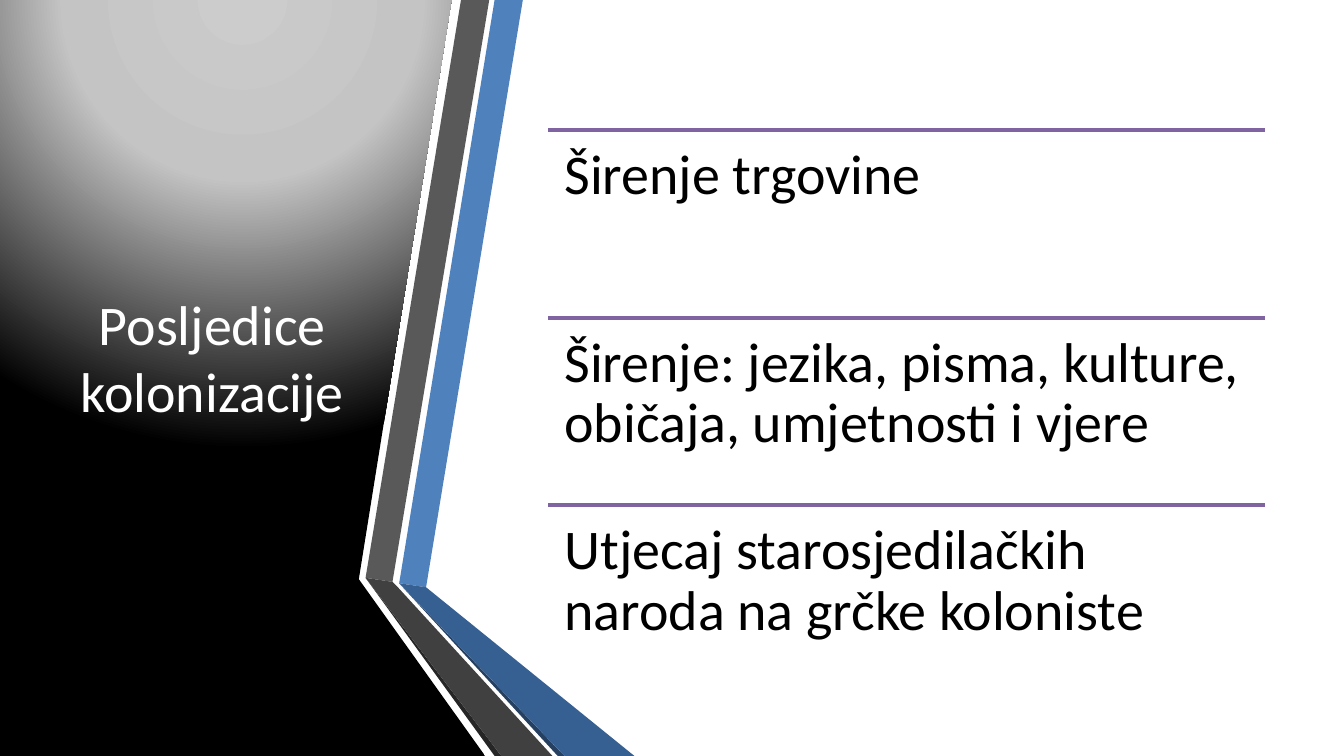
"""Build the slide on the effects of colonization."""
from lxml.etree import SubElement
from pptx import Presentation
from pptx.dml.color import RGBColor
from pptx.enum.shapes import MSO_CONNECTOR
from pptx.enum.text import MSO_ANCHOR, PP_ALIGN
from pptx.oxml import parse_xml
from pptx.oxml.ns import qn
from pptx.util import Inches, Pt

WIDE = 10
HIGH = WIDE * 9 / 16
FONT, SIZE = "Calibri", 30
TITLE = "Posljedice kolonizacije"
ITEMS = [
    "Širenje trgovine",
    "Širenje: jezika, pisma, kulture, običaja, umjetnosti i vjere",
    "Utjecaj starosjedilačkih naroda na grčke koloniste",
]
LEFT, TOP, WIDTH, LAST = 4.08, 0.97, 5.33, 3.76
STEP = (LAST - TOP) / (len(ITEMS) - 1)
PANEL = [(0, 0), (2.64, 0), (3.36, 0), (2.67, 4.31), (3.61, HIGH), (0, HIGH)]
STOPS = [(0, "CCCCCC"), (40, "C4C4C4"), (100, "000000")]
BANDS = [
    ("4F81BD", [(2.97, 4.34), (3.17, 4.37), (3.89, 0), (3.68, 0)]),
    ("595959", [(3.64, 0), (3.43, 0), (2.72, 4.3), (2.92, 4.33)]),
    ("262626", [(2.72, 4.3), (3.68, HIGH), (3.73, HIGH)]),
    ("254061", [(2.97, 4.34), (4.15, HIGH), (4.2, HIGH)]),
    ("376092", [(2.97, 4.34), (4.2, HIGH), (4.72, HIGH), (3.17, 4.37)]),
    ("404040", [(4.11, HIGH), (2.96, 4.37), (2.92, 4.33), (2.72, 4.3), (3.73, HIGH)]),
]


def color(code):
    """Turn a hex string into a color."""
    return RGBColor.from_string(code)


def draw(shapes, points, code):
    """Draw a closed outline with a plain fill."""
    spots = [(Inches(x), Inches(y)) for x, y in points]
    pen = shapes.build_freeform(*spots[0])
    pen.add_line_segments(spots[1:], close=True)
    shape = pen.convert_to_shape()
    shape.shadow.inherit = False
    shape.line.fill.background()
    shape.fill.solid()
    shape.fill.fore_color.rgb = color(code)
    return shape


def glow(shape, stops):
    """Swap the plain fill for a round gradient."""
    marks = "".join(
        f'<a:gs pos="{pos * 1000}"><a:srgbClr val="{code}"/></a:gs>' for pos, code in stops
    )
    props = shape.element.spPr
    plain = props.find(qn("a:solidFill"))
    props.replace(plain, parse_xml(
        '<a:gradFill xmlns:a="http://schemas.openxmlformats.org/drawingml/2006/main"'
        f' rotWithShape="1"><a:gsLst>{marks}</a:gsLst><a:path path="circle">'
        '<a:fillToRect l="50000" t="-80000" r="50000" b="180000"/></a:path></a:gradFill>'
    ))


def write(shapes, text, area, code):
    """Add a wrapped text box and return its frame and paragraph."""
    frame = shapes.add_textbox(*map(Inches, area)).text_frame
    frame.word_wrap = True
    para = frame.paragraphs[0]
    run = para.add_run()
    run.text = text
    run.font.name, run.font.size = FONT, Pt(SIZE)
    run.font.color.rgb = color(code)
    return frame, para


def rule(shapes, y):
    """Draw the line above an item."""
    line = shapes.add_connector(
        MSO_CONNECTOR.STRAIGHT, Inches(LEFT), Inches(y), Inches(LEFT + WIDTH), Inches(y)
    )
    line.line.color.rgb = color("8064A2")
    line.line.width = Pt(2)
    SubElement(line.element.spPr, qn("a:effectLst"))


def item(shapes, text, y):
    """Add one item under its line."""
    rule(shapes, y)
    frame, para = write(shapes, text, (LEFT, y, WIDTH, STEP), "000000")
    frame.margin_left = frame.margin_right = Inches(0.12)
    frame.margin_top = frame.margin_bottom = Inches(0.12)
    para.line_spacing = 0.9


def main():
    """Build and save the slide."""
    deck = Presentation()
    deck.slide_width, deck.slide_height = Inches(WIDE), Inches(HIGH)
    shapes = deck.slides.add_slide(deck.slide_layouts[6]).shapes
    glow(draw(shapes, PANEL, "000000"), STOPS)
    bands = shapes.add_group_shape().shapes
    for code, points in BANDS:
        draw(bands, points, code)
    frame, para = write(shapes, TITLE, (0.44, 0.56, 2.28, 4.19), "FFFFFF")
    frame.vertical_anchor = MSO_ANCHOR.MIDDLE
    para.alignment = PP_ALIGN.CENTER
    rows = shapes.add_group_shape().shapes
    for i, text in enumerate(ITEMS):
        item(rows, text, TOP + i * STEP)
    deck.save("out.pptx")


if __name__ == "__main__":
    main()
